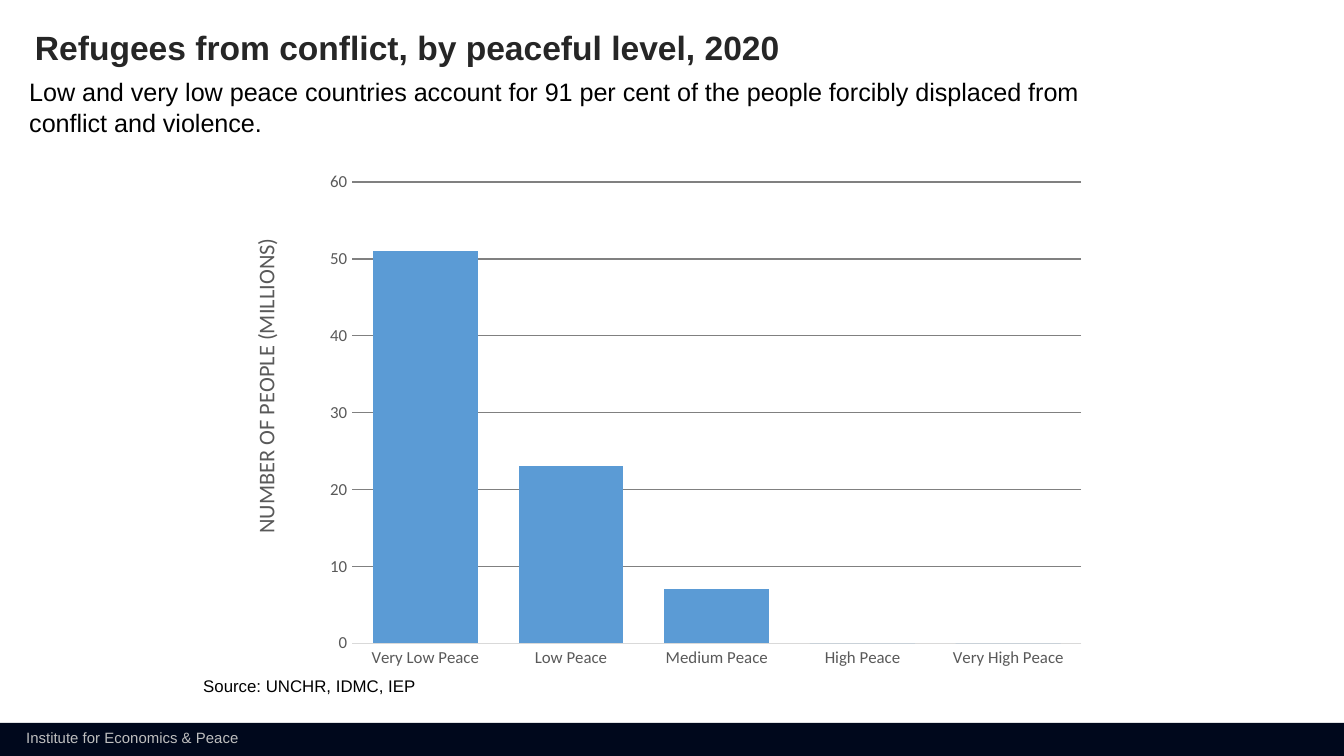
from lxml import etree
from pptx import Presentation
from pptx.chart.data import CategoryChartData
from pptx.dml.color import RGBColor
from pptx.enum.chart import XL_CHART_TYPE, XL_TICK_MARK
from pptx.enum.shapes import MSO_SHAPE
from pptx.oxml.ns import qn
from pptx.util import Emu, Pt

COLUMNS = XL_CHART_TYPE.COLUMN_CLUSTERED
NO_TICK = XL_TICK_MARK.NONE
RECT = MSO_SHAPE.RECTANGLE

BLACK = RGBColor(0x00, 0x00, 0x00)
NAVY = RGBColor(0x00, 0x08, 0x1C)
SILVER = RGBColor(0xBF, 0xBF, 0xBF)
CHARCOAL = RGBColor(0x26, 0x26, 0x26)
LABEL_GREY = RGBColor(0x59, 0x59, 0x59)
AXIS_GREY = RGBColor(0xD9, 0xD9, 0xD9)
GRID_GREY = RGBColor(0x80, 0x80, 0x80)
BLUE = RGBColor(0x5B, 0x9B, 0xD5)

WIDTH, HEIGHT = 1344, 756
EMU_PER_PX = 9144000 / WIDTH


def px(n):
    return Emu(round(n * EMU_PER_PX))


def place(parent, **parts):
    """Give a chart element a manual layout; parts are c:manualLayout values."""
    layout = parent.find(qn("c:layout"))
    if layout is None:
        layout = etree.Element(qn("c:layout"))
        tx = parent.find(qn("c:tx"))
        parent.insert(0 if tx is None else 1, layout)
    for child in list(layout):
        layout.remove(child)
    manual = etree.SubElement(layout, qn("c:manualLayout"))
    for name, value in parts.items():
        etree.SubElement(manual, qn(f"c:{name}")).set("val", str(value))


class SlideBuilder:
    text_font = "Arial"
    chart_font = "Calibri"

    def __init__(self, slide):
        self.slide = slide

    def style(self, font, name, size, color, bold=False):
        font.name, font.size, font.bold = name, Pt(size), bold
        font.color.rgb = color

    def bar(self, x, y, w, h, color):
        sp = self.slide.shapes.add_shape(RECT, px(x), px(y), px(w), px(h))
        sp.shadow.inherit = False
        sp.fill.solid()
        sp.fill.fore_color.rgb = color
        sp.line.fill.background()

    def text(self, x, y, w, h, text, size, color, bold=False, wrap=True,
             inset=True, spacing=None):
        tf = self.slide.shapes.add_textbox(px(x), px(y), px(w), px(h)).text_frame
        tf.word_wrap = wrap
        if not inset:
            tf.margin_left = tf.margin_right = tf.margin_top = tf.margin_bottom = 0
        p = tf.paragraphs[0]
        p.text = text
        p.line_spacing = spacing
        self.style(p.font, self.text_font, size, color, bold)

    def column_chart(self, x, y, w, h, values, axis_title):
        data = CategoryChartData(number_format="#,##0")
        data.categories = list(values)
        data.add_series("Series 1", list(values.values()))
        chart = self.slide.shapes.add_chart(
            COLUMNS, px(x), px(y), px(w), px(h), data).chart
        chart.has_legend = chart.has_title = False
        self.style(chart.font, self.chart_font, 10, BLACK)

        plot = chart.plots[0]
        plot.vary_by_categories = False
        plot.gap_width, plot.overlap = 39, -27
        fill = plot.series[0].format.fill
        fill.solid()
        fill.fore_color.rgb = BLUE

        cat_axis, val_axis = chart.category_axis, chart.value_axis
        for axis in (cat_axis, val_axis):
            axis.major_tick_mark = axis.minor_tick_mark = NO_TICK
            self.style(axis.tick_labels.font, self.chart_font, 9, LABEL_GREY)
        cat_axis.format.line.color.rgb = AXIS_GREY
        cat_axis.format.line.width = Pt(0.75)

        val_axis.minimum_scale, val_axis.maximum_scale = 0, 60
        val_axis.major_unit = 10
        val_axis.tick_labels.number_format = "#,##0"
        val_axis.tick_labels.number_format_is_linked = False
        val_axis.format.line.fill.background()
        grid = val_axis.major_gridlines.format.line
        grid.color.rgb = GRID_GREY
        grid.width = Pt(0.75)

        title = val_axis.axis_title
        tf = title.text_frame
        tf.text = axis_title
        self.style(tf.paragraphs[0].font, self.chart_font, 12, LABEL_GREY)
        body = title._element.find(".//" + qn("a:bodyPr"))
        body.set("rot", "-5400000")
        body.set("vert", "horz")
        place(title._element, xMode="edge", yMode="edge", x=0.06, y=0.13)
        place(chart._chartSpace.find(".//" + qn("c:plotArea")),
              layoutTarget="inner", xMode="edge", yMode="edge",
              x=0.176, y=0.032, w=0.8, h=0.864)


def main():
    prs = Presentation()
    prs.slide_width, prs.slide_height = px(WIDTH), px(HEIGHT)
    s = SlideBuilder(prs.slides.add_slide(prs.slide_layouts[6]))

    s.bar(0, 723, WIDTH, 33, NAVY)
    s.text(13, 722, 242, 32, "Institute for Economics & Peace", 8, SILVER, wrap=False)
    s.text(35, 31, 1067, 40, "Refugees from conflict, by peaceful level, 2020",
           18, CHARCOAL, bold=True, inset=False, spacing=0.9)
    s.text(16, 70, 1103, 75,
           "Low and very low peace countries account for 91 per cent of the "
           "people forcibly displaced from conflict and violence.", 13.5, BLACK)
    people = {"Very Low Peace": 51, "Low Peace": 23, "Medium Peace": 7,
              "High Peace": 0, "Very High Peace": 0}
    s.column_chart(192, 165, 911, 534, people, "NUMBER OF PEOPLE (MILLIONS)")
    s.text(190, 669, 241, 34, "Source: UNCHR, IDMC, IEP", 9, BLACK, wrap=False)

    prs.save("out.pptx")


if __name__ == "__main__":
    main()
